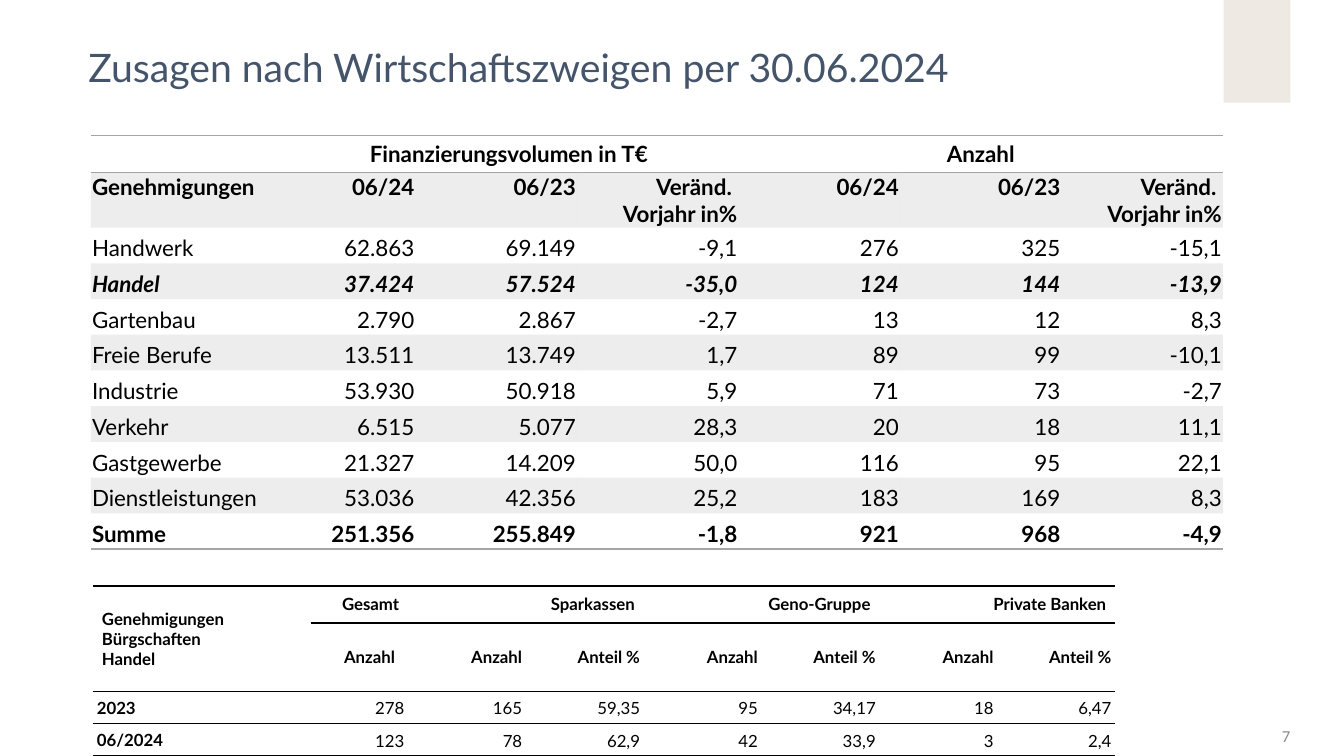
from dataclasses import dataclass

from lxml.etree import SubElement
from pptx import Presentation
from pptx.dml.color import RGBColor
from pptx.enum.shapes import MSO_SHAPE as Shape
from pptx.enum.text import MSO_ANCHOR as Anchor, PP_ALIGN as Align
from pptx.oxml.ns import qn
from pptx.util import Cm, Pt


@dataclass(frozen=True)
class Theme:
    title: str = "44546A"
    accent: str = "EEE9E3"
    grey: str = "A5A5A5"
    black: str = "000000"
    number: str = "8C8C8C"
    font: str = "Lato"
    number_font: str = "Calibri"
    title_size: int = 28
    main_size: int = 16
    small_size: int = 12
    band_alpha: int = 20000
    plain_style: str = "{2D5ABB26-0587-4C30-8999-92F81FD0307C}"


def apply(target, values):
    for name, value in values.items():
        setattr(target, name, value)


class SlideBuilder:
    def __init__(self, slide, theme):
        self.slide, self.theme = slide, theme

    def block(self, left, top, width, height, colour):
        block = self.slide.shapes.add_shape(
            Shape.RECTANGLE, Cm(left), Cm(top), Cm(width), Cm(height))
        block.shadow.inherit = False
        block.fill.solid()
        block.fill.fore_color.rgb = RGBColor.from_string(colour)
        block.line.fill.background()

    def set_text(self, frame, text, font, colour, para):
        for index, line in enumerate(text.split("\n")):
            paragraph = frame.add_paragraph() if index else frame.paragraphs[0]
            paragraph.text = line
            apply(paragraph, para)
            for run in paragraph.runs:
                apply(run.font, font)
                run.font.color.rgb = RGBColor.from_string(colour)

    def text(self, left, top, width, height, text, font, colour, para, frame):
        box = self.slide.shapes.add_textbox(Cm(left), Cm(top), Cm(width), Cm(height))
        apply(box.text_frame, {"word_wrap": True, **frame})
        self.set_text(box.text_frame, text, font, colour, para)

    def table(self, left, top, widths, heights):
        holder = self.slide.shapes.add_table(
            len(heights), len(widths), Cm(left), Cm(top),
            Cm(sum(widths)), Cm(sum(heights)))
        table = holder.table
        apply(table, {"first_row": False, "horz_banding": False})
        holder.element.find(".//" + qn("a:tableStyleId")).text = self.theme.plain_style
        for column, width in zip(table.columns, widths):
            column.width = Cm(width)
        for row, height in zip(table.rows, heights):
            row.height = Cm(height)
        return table

    def cell(self, cell, text, font, para, margins, anchor, edges, banded=False):
        left_right, top, bottom = margins
        apply(cell, {"margin_left": Cm(left_right), "margin_right": Cm(left_right),
                     "margin_top": Cm(top), "margin_bottom": Cm(bottom),
                     "vertical_anchor": anchor})
        self.set_text(cell.text_frame, text, font, self.theme.black, para)
        # Borders come before the fill in the cell properties
        properties = cell._tc.get_or_add_tcPr()
        for side, (colour, width) in edges.items():
            line = SubElement(properties, qn("a:ln" + side), w=str(int(Pt(width))))
            SubElement(SubElement(line, qn("a:solidFill")), qn("a:srgbClr"), val=colour)
        if not banded:
            cell.fill.background()
            return
        cell.fill.solid()
        cell.fill.fore_color.rgb = RGBColor.from_string(self.theme.grey)
        shade = properties.find(qn("a:solidFill") + "/" + qn("a:srgbClr"))
        SubElement(shade, qn("a:alpha"), val=str(self.theme.band_alpha))


CHANGE = "Veränd. \vVorjahr in%"
SECTORS = [
    ["", "Finanzierungsvolumen in T€", "", "", "Anzahl", "", ""],
    ["Genehmigungen"] + ["06/24", "06/23", CHANGE] * 2,
    ["Handwerk", "62.863", "69.149", "-9,1", "276", "325", "-15,1"],
    ["Handel", "37.424", "57.524", "-35,0", "124", "144", "-13,9"],
    ["Gartenbau", "2.790", "2.867", "-2,7", "13", "12", "8,3"],
    ["Freie Berufe", "13.511", "13.749", "1,7", "89", "99", "-10,1"],
    ["Industrie", "53.930", "50.918", "5,9", "71", "73", "-2,7"],
    ["Verkehr", "6.515", "5.077", "28,3", "20", "18", "11,1"],
    ["Gastgewerbe", "21.327", "14.209", "50,0", "116", "95", "22,1"],
    ["Dienstleistungen", "53.036", "42.356", "25,2", "183", "169", "8,3"],
    ["Summe", "251.356", "255.849", "-1,8", "921", "968", "-4,9"],
]
BANKS = [
    ["Genehmigungen \nBürgschaften \nHandel ", "Gesamt", "Sparkassen", "",
     "Geno-Gruppe", "", "Private Banken", ""],
    ["", "Anzahl "] + ["Anzahl", "Anteil %"] * 3,
    ["2023", "278", "165", "59,35", "95", "34,17", "18", "6,47"],
    ["06/2024", "123", "78", "62,9", "42", "33,9", "3", "2,4"],
]


def add_sectors(builder):
    theme = builder.theme
    sectors = builder.table(2.29, 3.41, [4.75, 3.43] + [4.07] * 5,
                            [0.94, 1.38] + [0.9] * 9)
    for first in (1, 4):
        sectors.cell(0, first).merge(sectors.cell(0, first + 2))
    last = len(SECTORS) - 1
    rule = (theme.grey, 1)
    row_edges = {0: {"T": rule, "B": rule}, last: {"B": rule}}
    for r, values in enumerate(SECTORS):
        trade = values[0] == "Handel"
        font = {"name": theme.font, "size": Pt(theme.main_size),
                "bold": r in (0, 1, last) or trade, "italic": trade}
        for c, value in enumerate(values):
            align = Align.CENTER if r == 0 else Align.RIGHT if c else Align.LEFT
            para = {"alignment": align, "space_after": Pt(6),
                    "line_spacing": 1.0 if r == 1 else 1.15}
            builder.cell(sectors.cell(r, c), value, font, para, (0.03, 0.03, 0),
                         Anchor.TOP if r < 2 else Anchor.MIDDLE,
                         row_edges.get(r, {}), banded=r % 2 == 1)


def add_banks(builder):
    theme = builder.theme
    banks = builder.table(2.34, 14.76, [5.49, 2.46] + [2.97] * 6,
                          [0.94, 1.73, 0.81, 0.81])
    banks.cell(0, 0).merge(banks.cell(1, 0))
    for first in (2, 4, 6):
        banks.cell(0, first).merge(banks.cell(0, first + 1))
    last = len(BANKS) - 1
    for r, values in enumerate(BANKS):
        for c, value in enumerate(values):
            font = {"name": theme.font, "size": Pt(theme.small_size),
                    "bold": r < 2 or c == 0}
            align = Align.RIGHT if c else Align.JUSTIFY if r == 0 else Align.LEFT
            para = {"alignment": align,
                    "line_spacing": 1.1 if r == last and c else 1.0}
            roomy = r == 0 or (r, c) == (1, 1)
            edges = {} if (r, c) == (1, 0) else {"T": (theme.black, 1 if r else 1.5)}
            if r == last:
                edges["B"] = (theme.black, 1)
            builder.cell(banks.cell(r, c), value, font, para,
                         (0.23, 0.1, 0.1) if roomy else (0.1, 0, 0),
                         Anchor.MIDDLE, edges)


def main():
    deck = Presentation()
    apply(deck, {"slide_width": Cm(33.87), "slide_height": Cm(19.05)})
    theme = Theme()
    builder = SlideBuilder(deck.slides.add_slide(deck.slide_layouts[6]), theme)

    # Corner accent and title
    builder.block(30.84, 0, 1.68, 2.59, theme.accent)
    builder.text(1.98, 1.09, 28.85, 1.85,
                 "Zusagen nach Wirtschaftszweigen per 30.06.2024",
                 {"name": theme.font, "size": Pt(theme.title_size)}, theme.title,
                 {"line_spacing": 0.9}, {"vertical_anchor": Anchor.TOP})

    # Page number
    builder.text(30.84, 18.03, 1.68, 1.02, "7",
                 {"name": theme.number_font, "size": Pt(theme.small_size)},
                 theme.number, {"alignment": Align.RIGHT},
                 {"vertical_anchor": Anchor.MIDDLE, "margin_right": 0})

    # Approvals by sector, then guarantees by bank group
    add_sectors(builder)
    add_banks(builder)
    deck.save("out.pptx")


if __name__ == "__main__":
    main()
